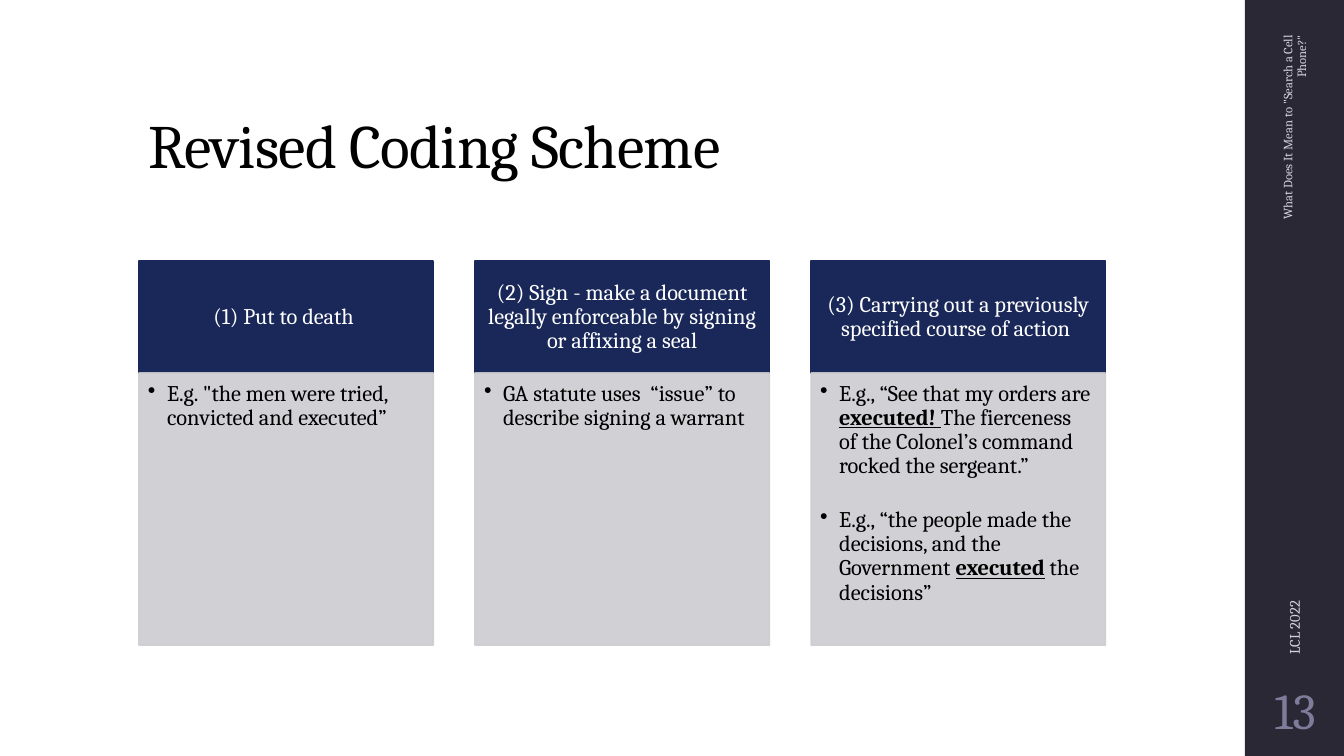
from dataclasses import dataclass

from lxml.etree import SubElement
from pptx import Presentation
from pptx.dml.color import RGBColor
from pptx.enum.shapes import MSO_SHAPE
from pptx.enum.text import MSO_ANCHOR as Anchor, PP_ALIGN as Align
from pptx.oxml.ns import qn
from pptx.util import Cm, Pt

FONT = "Cambria"
BLACK = RGBColor(0x00, 0x00, 0x00)
WHITE = RGBColor(0xFF, 0xFF, 0xFF)
NAVY = RGBColor(0x19, 0x28, 0x58)
GREY = RGBColor(0xCC, 0xCD, 0xD1)
SIDEBAR = RGBColor(0x29, 0x28, 0x34)
FOOTER = RGBColor(0xD4, 0xD3, 0xDD)
NUMBER = RGBColor(0x7F, 0x7B, 0x9A)

# Card layout, in centimetres
LEFT, STEP, WIDTH = 3.5, 8.47, 7.42
HEAD_TOP, HEAD_HEIGHT, BODY_HEIGHT = 6.58, 2.82, 6.86


@dataclass
class Run:
    text: str
    strong: bool = False


@dataclass
class Card:
    heading: str
    examples: list[list[Run]]


@dataclass
class Label:
    text: str
    box: tuple[float, float, float, float]
    size: float
    color: RGBColor
    align: Align = Align.LEFT
    anchor: Anchor = Anchor.MIDDLE
    margin: float = 0.25
    rotation: int = 0
    spacing: float = 0


CARDS = [
    Card("(1) Put to death ",
         [[Run("E.g. \"the men were tried, convicted and executed”")]]),
    Card("(2) Sign - make a document legally enforceable by signing or affixing a seal",
         [[Run("GA statute uses  “issue” to describe signing a warrant")]]),
    Card("(3) Carrying out a previously specified course of action ",
         [[Run("E.g., “See that my orders are "), Run("executed! ", True),
           Run("The fierceness of the Colonel’s command rocked the sergeant.”")],
          [Run("E.g., “the people made the decisions, and the Government "),
           Run("executed", True), Run(" the decisions”")]]),
]

LABELS = [
    Label("Revised Coding Scheme", (3.5, 1.02, 26.92, 3.68), 44, BLACK,
          anchor=Anchor.BOTTOM, spacing=-0.5),
    Label("What Does It Mean to \"Search a Cell Phone?\"", (30, 2.77, 5.28, 1.02), 9,
          FOOTER, Align.RIGHT, rotation=270),
    Label("LCL 2022", (27.66, 11.25, 9.96, 1.02), 10.5, FOOTER, rotation=270),
    Label("13", (31.37, 17.14, 2.54, 1.65), 36, NUMBER, Align.CENTER, margin=0.13),
]


def set_frame(tf, anchor: Anchor, left: float, top: float, right: float, bottom: float) -> None:
    tf.word_wrap = True
    tf.vertical_anchor = anchor
    tf.margin_left, tf.margin_top = Cm(left), Cm(top)
    tf.margin_right, tf.margin_bottom = Cm(right), Cm(bottom)


def add_run(p, run: Run, size: float, color: RGBColor):
    r = p.add_run()
    r.text = run.text
    r.font.name, r.font.size = FONT, Pt(size)
    r.font.color.rgb = color
    if run.strong:
        r.font.bold = r.font.underline = True
    return r


def add_rect(s, box: tuple[float, float, float, float], color: RGBColor,
             opacity: int = 100, outlined: bool = True):
    sp = s.shapes.add_shape(MSO_SHAPE.RECTANGLE, *map(Cm, box))
    sp.shadow.inherit = False
    sp.fill.solid()
    sp.fill.fore_color.rgb = color
    if outlined:
        sp.line.color.rgb = color
        sp.line.width = Pt(1.1)
    else:
        sp.line.fill.background()
    if opacity < 100:
        for clr in sp.element.spPr.iter(qn("a:srgbClr")):
            SubElement(clr, qn("a:alpha"), val=str(opacity * 1000))
    return sp


def add_label(s, label: Label) -> None:
    sp = s.shapes.add_textbox(*map(Cm, label.box))
    sp.rotation = label.rotation
    tf = sp.text_frame
    set_frame(tf, label.anchor, label.margin, 0.13, label.margin, 0.13)
    p = tf.paragraphs[0]
    p.alignment, p.line_spacing = label.align, 0.9
    r = add_run(p, Run(label.text), label.size, label.color)
    if label.spacing:
        r.font._element.set("spc", str(int(label.spacing * 100)))


def add_card(s, card: Card, left: float) -> None:
    # Heading
    tf = add_rect(s, (left, HEAD_TOP, WIDTH, HEAD_HEIGHT), NAVY).text_frame
    set_frame(tf, Anchor.MIDDLE, 0.3, 0.18, 0.3, 0.18)
    p = tf.paragraphs[0]
    p.alignment, p.line_spacing = Align.CENTER, 0.9
    add_run(p, Run(card.heading), 16, WHITE)

    # Bulleted examples
    body = (left, HEAD_TOP + HEAD_HEIGHT, WIDTH, BODY_HEIGHT)
    tf = add_rect(s, body, GREY, opacity=90).text_frame
    set_frame(tf, Anchor.TOP, 0.23, 0.23, 0.3, 0.36)
    for i, example in enumerate(card.examples):
        p = tf.add_paragraph() if i else tf.paragraphs[0]
        p.alignment, p.line_spacing = Align.LEFT, 0.9
        p.space_before = Pt(21 if i else 0)
        pPr = p._p.get_or_add_pPr()
        pPr.set("marL", str(Cm(0.48)))
        pPr.set("indent", str(-Cm(0.48)))
        SubElement(pPr, qn("a:buChar"), char="•")
        for run in example:
            add_run(p, run, 16, BLACK)


def main() -> None:
    prs = Presentation()
    prs.slide_width, prs.slide_height = Cm(33.87), Cm(19.05)
    s = prs.slides.add_slide(prs.slide_layouts[6])

    # Sidebar, title and footers
    add_rect(s, (31.37, 0, 2.5, 19.05), SIDEBAR, outlined=False)
    for label in LABELS:
        add_label(s, label)

    # Coding categories
    for i, card in enumerate(CARDS):
        add_card(s, card, LEFT + i * STEP)

    prs.save("out.pptx")


if __name__ == "__main__":
    main()
